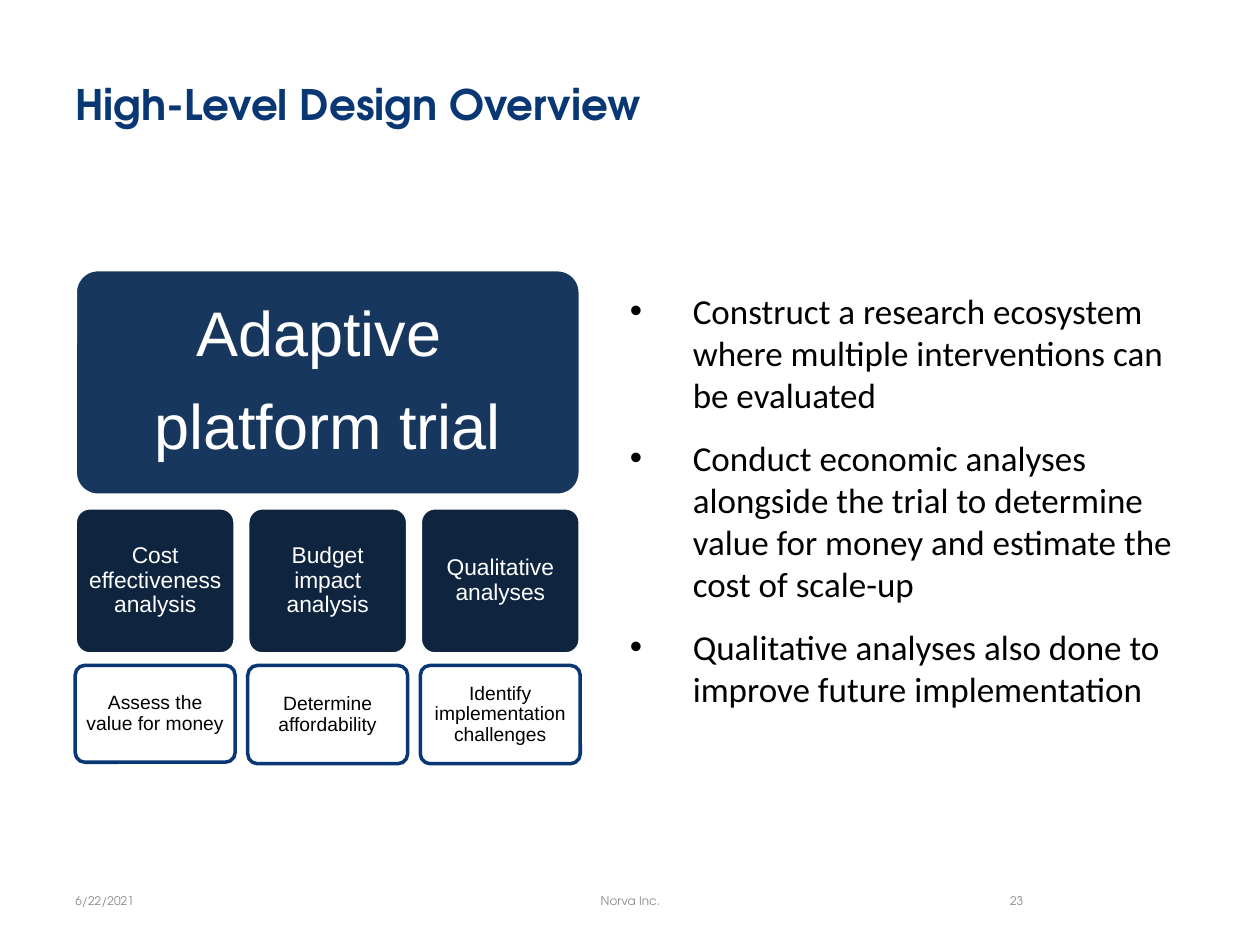
from lxml.etree import SubElement
from pptx import Presentation
from pptx.dml.color import RGBColor
from pptx.enum.shapes import MSO_SHAPE
from pptx.enum.text import MSO_ANCHOR, PP_ALIGN
from pptx.oxml.ns import qn
from pptx.util import Pt

NAVY = RGBColor(0x08, 0x37, 0x73)
TRIAL_BLUE = RGBColor(0x17, 0x37, 0x5E)
ANALYSIS_BLUE = RGBColor(0x0F, 0x24, 0x3E)
WHITE = RGBColor(0xFF, 0xFF, 0xFF)
BLACK = RGBColor(0, 0, 0)
GRAY = RGBColor(0x89, 0x89, 0x89)

HEADING_FONT = "TeX Gyre Adventor"
DIAGRAM_FONT = "Arial"
BODY_FONT = "Calibri"

BRANCHES = [
    ("Cost effectiveness analysis", "Assess the value for money", 55.4),
    ("Budget impact analysis", "Determine affordability", 56.2),
    ("Qualitative analyses", "Identify implementation challenges", 56.2),
]
POINTS = [
    "Construct a research ecosystem where multiple interventions can be evaluated",
    "Conduct economic analyses alongside the trial to determine value for money and estimate the cost of scale-up",
    "Qualitative analyses also done to improve future implementation",
]


def add_run(paragraph, text, size, font, color, bold=False):
    run = paragraph.add_run()
    run.text = text
    run.font.size = Pt(size)
    run.font.name = font
    run.font.color.rgb = color
    run.font.bold = bold


def add_frame(slide, left, top, width, height, anchor):
    box = slide.shapes.add_textbox(Pt(left), Pt(top), Pt(width), Pt(height))
    frame = box.text_frame
    frame.word_wrap = True
    frame.vertical_anchor = anchor
    return frame


def add_label(slide, box, text, size, color, align=PP_ALIGN.LEFT, bold=False):
    paragraph = add_frame(slide, *box, MSO_ANCHOR.MIDDLE).paragraphs[0]
    paragraph.alignment = align
    add_run(paragraph, text, size, HEADING_FONT, color, bold)


def add_card(slide, box, lines, size, fill, line, color, inset):
    card = slide.shapes.add_shape(MSO_SHAPE.ROUNDED_RECTANGLE, *map(Pt, box))
    card.adjustments[0] = 0.1
    card.shadow.inherit = False
    card.fill.solid()
    card.fill.fore_color.rgb = fill
    card.line.color.rgb = line
    card.line.width = Pt(2)
    frame = card.text_frame
    frame.word_wrap = True
    frame.vertical_anchor = MSO_ANCHOR.MIDDLE
    frame.margin_left = frame.margin_right = Pt(inset)
    frame.margin_top = frame.margin_bottom = Pt(inset)
    for index, text in enumerate(lines):
        paragraph = frame.paragraphs[0] if index == 0 else frame.add_paragraph()
        paragraph.alignment = PP_ALIGN.CENTER
        paragraph.line_spacing = 0.9
        if index < len(lines) - 1:
            paragraph.space_after = Pt(14)
        add_run(paragraph, text, size, DIAGRAM_FONT, color)


def add_diagram(slide, left, top, width):
    gap = 7.2
    trial_height, analysis_height = 128.9, 83.5
    column = (width - gap * (len(BRANCHES) - 1)) / len(BRANCHES)
    analysis_top = top + trial_height + gap
    purpose_top = analysis_top + analysis_height + 6.5
    add_card(slide, (left, top, width, trial_height), ["Adaptive ", "platform trial"],
             36, TRIAL_BLUE, WHITE, WHITE, 10.8)
    for index, (analysis, purpose, purpose_height) in enumerate(BRANCHES):
        x = left + index * (column + gap)
        add_card(slide, (x, analysis_top, column, analysis_height), [analysis],
                 13, ANALYSIS_BLUE, WHITE, WHITE, 3.6)
        add_card(slide, (x, purpose_top, column, purpose_height), [purpose],
                 11, WHITE, NAVY, BLACK, 3.6)


def add_points(slide, left, top, width, height):
    frame = add_frame(slide, left, top, width, height, MSO_ANCHOR.TOP)
    for index, text in enumerate(POINTS):
        paragraph = frame.paragraphs[0] if index == 0 else frame.add_paragraph()
        if index:
            paragraph.space_before = Pt(6)
        paragraph.space_after = Pt(6)
        properties = paragraph._p.get_or_add_pPr()
        properties.set("marL", str(Pt(36)))
        properties.set("indent", str(Pt(-36)))
        SubElement(properties, qn("a:buFont"), typeface="Arial")
        SubElement(properties, qn("a:buChar"), char="•")
        add_run(paragraph, text, 20, BODY_FONT, BLACK)


def add_footer(slide, left, top, height):
    parts = [
        ("6/22/2021", 0, 167.8, PP_ALIGN.LEFT),
        ("Norva Inc.", 210.2, 228.2, PP_ALIGN.CENTER),
        ("23", 480.2, 75.6, PP_ALIGN.RIGHT),
    ]
    for text, offset, width, align in parts:
        add_label(slide, (left + offset, top, width, height), text, 6.8, GRAY, align)


def main():
    presentation = Presentation()
    presentation.slide_width = Pt(720)
    presentation.slide_height = Pt(540)
    slide = presentation.slides.add_slide(presentation.slide_layouts[6])
    add_label(slide, (36, 21.6, 648, 74.9), "High-Level Design Overview", 24, NAVY, bold=True)
    add_footer(slide, 36, 500.4, 28.8)
    add_points(slide, 352.8, 162, 331.2, 258.5)
    add_diagram(slide, 43, 154.1, 288.6)
    presentation.save("out.pptx")


if __name__ == "__main__":
    main()
